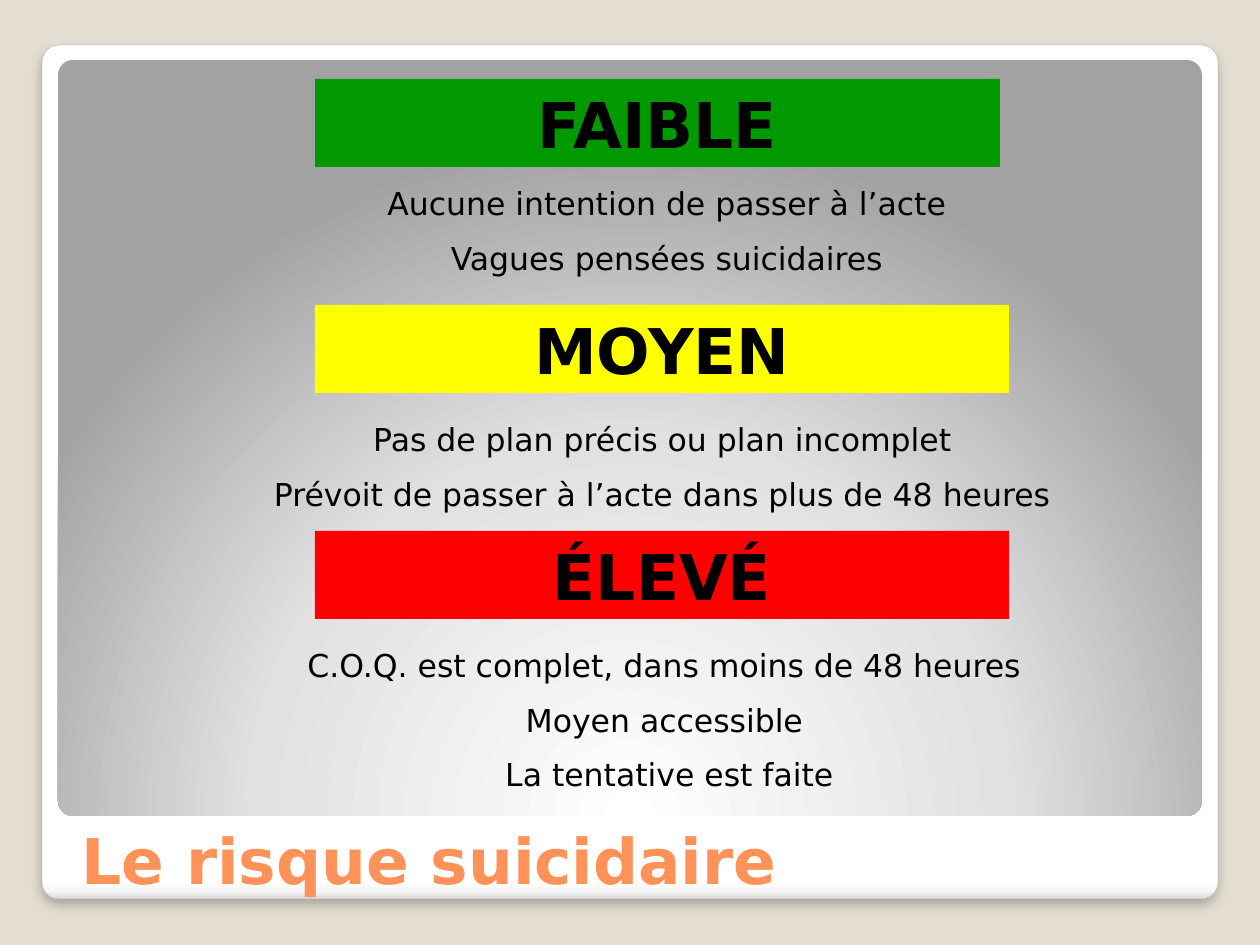
from dataclasses import dataclass

from lxml import etree
from pptx import Presentation
from pptx.dml.color import RGBColor
from pptx.enum.shapes import MSO_SHAPE
from pptx.enum.text import MSO_ANCHOR, PP_ALIGN
from pptx.oxml import parse_xml
from pptx.util import Emu, Pt

RECT, ROUNDED = MSO_SHAPE.RECTANGLE, MSO_SHAPE.ROUNDED_RECTANGLE
TOP, BOTTOM = MSO_ANCHOR.TOP, MSO_ANCHOR.BOTTOM
LEFT, CENTER = PP_ALIGN.LEFT, PP_ALIGN.CENTER
NS = "http://schemas.openxmlformats.org/drawingml/2006/main"
EMU_PER_PX = 914400 / 126


@dataclass(frozen=True)
class Theme:
    font: str = "DejaVu Sans"
    background: str = "E3DED1"
    text: str = "000000"
    title: str = "FF9258"
    frame_line: str = "A4A4A4"
    heading_size: int = 36
    body_size: int = 18
    paragraph_gap: float = 9.6
    frame_stops: tuple = ((0, "FFFFFF"), (98, "FFFFFF"), (99, "F7F7F7"), (100, "DADADA"))
    panel_stops: tuple = ((0, "FFFFFF"), (55, "E1E1E1"), (100, "A2A2A2"))


THEME = Theme()

TITLE = "Le risque suicidaire"
TITLE_BOX = (69, 758, 1128, 145)
FRAME_BOX = (42, 45, 1176, 854)
PANEL_BOX = (58, 60, 1144, 756)

# level, colour, banner width, (criteria left, width, offset below banner top), criteria
LEVELS = [
    ("FAIBLE", "009900", 685, (315, 704, 99),
     ["Aucune intention de passer à l’acte", "Vagues pensées suicidaires"]),
    ("MOYEN", "FFFF00", 694, (186, 953, 109),
     ["Pas de plan précis ou plan incomplet",
      "Prévoit de passer à l’acte dans plus de 48 heures"]),
    ("ÉLEVÉ", "FF0000", 694, (178, 973, 109),
     ["C.O.Q. est complet, dans moins de 48 heures", "Moyen accessible",
      " La tentative est faite"]),
]
BANNER_LEFT, BANNER_TOP, BANNER_HEIGHT, LEVEL_PITCH = 315, 79, 88, 226
FIRST_LINE, NEXT_LINE = 50, 57


def emu(box):
    return [Emu(round(px * EMU_PER_PX)) for px in box]


def rgb(code):
    return RGBColor.from_string(code)


def add_block(slide, kind, box):
    block = slide.shapes.add_shape(kind, *emu(box))
    block.shadow.inherit = False
    block.line.fill.background()
    return block


def set_gradient(block, stops, direction):
    """Fill the block with a gradient; direction is its a:lin or a:path element."""
    marks = "".join(
        f'<a:gs pos="{pos * 1000}"><a:srgbClr val="{code}"/></a:gs>' for pos, code in stops)
    gradient = parse_xml(
        f'<a:gradFill xmlns:a="{NS}" rotWithShape="1"><a:gsLst>{marks}</a:gsLst>'
        f'{direction}</a:gradFill>')
    block.fill.background()
    plain = block.element.spPr.find(f"{{{NS}}}noFill")
    block.element.spPr.replace(plain, gradient)


def add_soft_shadow(block):
    effects = block.element.spPr.find(f"{{{NS}}}effectLst")
    shadow = etree.SubElement(
        effects, f"{{{NS}}}outerShdw", blurRad=str(Pt(6)), dist=str(Pt(4)),
        dir="5400000", algn="tl", rotWithShape="0")
    color = etree.SubElement(shadow, f"{{{NS}}}srgbClr", val="000000")
    etree.SubElement(color, f"{{{NS}}}alpha", val="25000")


def write(holder, lines, size, color, bold=False, align=CENTER, anchor=TOP):
    frame = holder.text_frame
    frame.word_wrap = True
    frame.vertical_anchor = anchor
    for index, line in enumerate(lines):
        paragraph = frame.add_paragraph() if index else frame.paragraphs[0]
        paragraph.alignment = align
        if index:
            paragraph.space_before = Pt(THEME.paragraph_gap)
        run = paragraph.add_run()
        run.text = line
        run.font.name = THEME.font
        run.font.size = Pt(size)
        run.font.bold = bold
        run.font.color.rgb = rgb(color)


def add_backdrop(slide):
    slide.background.fill.solid()
    slide.background.fill.fore_color.rgb = rgb(THEME.background)

    frame = add_block(slide, ROUNDED, FRAME_BOX)
    set_gradient(frame, THEME.frame_stops, '<a:lin ang="5400000" scaled="0"/>')
    frame.line.color.rgb = rgb(THEME.frame_line)
    frame.line.width = Pt(0.16)
    add_soft_shadow(frame)

    panel = add_block(slide, ROUNDED, PANEL_BOX)
    set_gradient(
        panel, THEME.panel_stops,
        '<a:path path="circle"><a:fillToRect l="50000" t="175000" r="50000" b="-75000"/></a:path>')
    for block in (frame, panel):
        block.adjustments[0] = 0.02


def add_level(slide, top, level, color, banner_width, criteria_place, criteria):
    banner = add_block(slide, RECT, (BANNER_LEFT, top, banner_width, BANNER_HEIGHT))
    banner.fill.solid()
    banner.fill.fore_color.rgb = rgb(color)
    write(banner, [level], THEME.heading_size, THEME.text, bold=True)

    left, width, offset = criteria_place
    height = FIRST_LINE + NEXT_LINE * (len(criteria) - 1)
    criteria_box = slide.shapes.add_textbox(*emu((left, top + offset, width, height)))
    write(criteria_box, criteria, THEME.body_size, THEME.text)


def main():
    deck = Presentation()
    deck.slide_width, deck.slide_height = emu((1260, 945))
    slide = deck.slides.add_slide(deck.slide_layouts[6])
    add_backdrop(slide)
    title = slide.shapes.add_textbox(*emu(TITLE_BOX))
    write(title, [TITLE], THEME.heading_size, THEME.title, True, LEFT, BOTTOM)
    for index, level in enumerate(LEVELS):
        add_level(slide, BANNER_TOP + index * LEVEL_PITCH, *level)
    deck.save("out.pptx")


if __name__ == "__main__":
    main()
